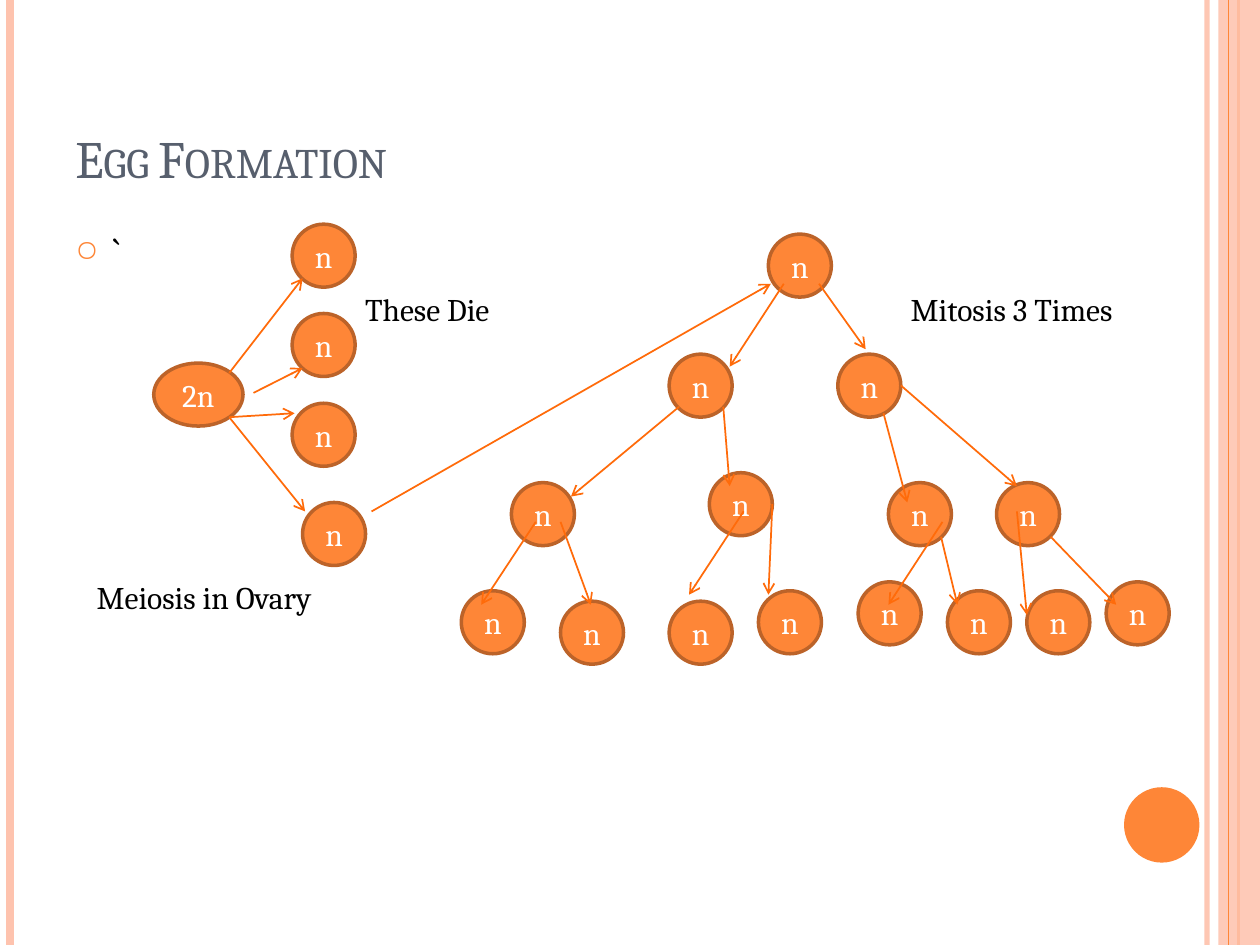
import lxml.etree
import pptx
import pptx.dml.color
import pptx.enum.shapes
import pptx.enum.text
import pptx.oxml.ns
import pptx.util
from pptx.util import Cm

FONT = "Cambria"
ORANGE, PEACH, ARROW, RIM = "FE8637", "FEC3AE", "FF6B0A", "BC6329"
SLIDE_WIDTH, SLIDE_HEIGHT = 25.4, 19.05
CELL = 1.27
SHAPES = pptx.enum.shapes.MSO_SHAPE
ANCHOR = pptx.enum.text.MSO_ANCHOR

# Cells are (left, top), arrows (from x, from y, to x, to y), in cm within their region.
MEIOSIS_CELLS = [(4.19, 0), (4.19, 1.8), (4.19, 3.61), (4.4, 5.61)]
MEIOSIS_ARROWS = [
    (2.92, 3, 4.4, 1.09), (3.41, 3.4, 4.4, 2.9),
    (2.92, 3.89, 4.24, 3.81), (2.92, 3.89, 4.45, 5.79),
]
MITOSIS_CELLS = [
    (6.19, 0),
    (4.19, 2.42), (7.59, 2.42),
    (1.01, 5.01), (5, 4.81), (8.61, 5.01), (10.79, 5.01),
    (0, 7.19), (2, 7.4), (4.19, 7.4), (5.99, 7.19),
    (8, 7.01), (9.8, 7.19), (11.4, 7.19), (13, 7.01),
]
MITOSIS_ARROWS = [
    (6.5, 1, 5.41, 2.67), (7.21, 1, 8.15, 2.32),
    (4.39, 3.48, 2.21, 5.29), (5.28, 3.48, 5.41, 5.08),
    (8.51, 3.61, 8.99, 5.41), (8.86, 3.05, 11.2, 5.08),
    (1.5, 5.8, 0.4, 7.47), (2, 5.8, 2.61, 7.47),
    (5.69, 5.59, 4.59, 7.27), (6.27, 5.44, 6.19, 7.27),
    (9.7, 5.8, 8.61, 7.47), (9.67, 6.1, 10, 7.47),
    (11.2, 5.59, 11.4, 7.68), (11.88, 6.1, 13.2, 7.47),
]


def color(value):
    return pptx.dml.color.RGBColor.from_string(value)


def add_element(parent, tag, **attributes):
    element = lxml.etree.SubElement(parent, pptx.oxml.ns.qn(tag))
    for name, value in attributes.items():
        element.set(name, str(value))
    return element


def set_opacity(fill_owner, percent):
    for solid in fill_owner.iter(pptx.oxml.ns.qn("a:srgbClr")):
        add_element(solid, "a:alpha", val=percent * 1000)


def style_paragraph(paragraph, size, font_color):
    paragraph.font.name = FONT
    paragraph.font.size = pptx.util.Pt(size)
    paragraph.font.color.rgb = color(font_color)


def add_text(slide, text, left, top, width, height, size=18, font_color="000000", wrap=True):
    box = slide.shapes.add_textbox(Cm(left), Cm(top), Cm(width), Cm(height))
    box.text_frame.word_wrap = wrap
    paragraph = box.text_frame.paragraphs[0]
    paragraph.text = text
    style_paragraph(paragraph, size, font_color)
    return box


def add_line(slide, x1, y1, x2, y2, line_color=ARROW, width=1, arrow=False):
    line = slide.shapes.add_connector(
        pptx.enum.shapes.MSO_CONNECTOR.STRAIGHT, Cm(x1), Cm(y1), Cm(x2), Cm(y2))
    line.line.color.rgb = color(line_color)
    line.line.width = pptx.util.Pt(width)
    if arrow:
        add_element(line.line._get_or_add_ln(), "a:tailEnd", type="arrow")
    add_element(line._element.spPr, "a:effectLst")
    return line


def add_plain_shape(slide, kind, left, top, width, height, fill):
    shape = slide.shapes.add_shape(kind, Cm(left), Cm(top), Cm(width), Cm(height))
    shape.shadow.inherit = False
    shape.fill.solid()
    shape.fill.fore_color.rgb = color(fill)
    shape.line.fill.background()
    return shape


def add_cell(slide, text, left, top, width=CELL):
    cell = add_plain_shape(
        slide, SHAPES.FLOWCHART_CONNECTOR, left, top, width, CELL, ORANGE)
    cell.line.color.rgb = color(RIM)
    cell.line.width = pptx.util.Pt(2)
    cell.text_frame.vertical_anchor = ANCHOR.MIDDLE
    paragraph = cell.text_frame.paragraphs[0]
    paragraph.text = text
    paragraph.alignment = pptx.enum.text.PP_ALIGN.CENTER
    style_paragraph(paragraph, 18, "FFFFFF")


def add_division(slide, left, top, cells, arrows):
    """Place the haploid cells and their arrows relative to the region's corner."""
    for x, y in cells:
        add_cell(slide, "n", left + x, top + y)
    for x1, y1, x2, y2 in arrows:
        add_line(slide, left + x1, top + y1, left + x2, top + y2, arrow=True)


def add_side_bands(slide, width, height):
    def add_stripe(x, stripe_color, points):
        return add_line(slide, x, 0, x, height, stripe_color, points)

    edge = add_stripe(width - 1.07, PEACH, 3)
    set_opacity(edge._element, 93)
    add_stripe(0.2, PEACH, 4.5)
    add_stripe(width - 0.43, ORANGE, 1.5)
    band = add_plain_shape(slide, SHAPES.RECTANGLE, width - 0.84, 0, 0.84, height, PEACH)
    set_opacity(band._element, 87)
    add_stripe(width - 0.64, ORANGE, 0.75)
    add_plain_shape(slide, SHAPES.OVAL, width - 2.74, height - 3.18, 1.52, 1.52, ORANGE)


def add_heading(slide, left, top, width):
    title = add_text(slide, "Egg Formation", left, top, width, 3.18, 30, "575F6D")
    title.text_frame.vertical_anchor = ANCHOR.BOTTOM
    properties = title.text_frame.paragraphs[0]._p.pPr
    properties.find(pptx.oxml.ns.qn("a:defRPr")).set("cap", "small")


def add_body(slide, left, top, width, height):
    body = add_text(slide, "`", left, top, width, height, 24)
    paragraph = body.text_frame.paragraphs[0]
    properties = paragraph._p.pPr
    indent = Cm(0.76)
    properties.set("marL", str(indent))
    properties.set("indent", str(-indent))
    defaults = properties.find(pptx.oxml.ns.qn("a:defRPr"))
    bullet_color = add_element(properties, "a:buClr")
    add_element(bullet_color, "a:srgbClr", val=ORANGE)
    add_element(properties, "a:buSzPct", val=70000)
    add_element(properties, "a:buChar", char="○")
    properties.append(defaults)
    paragraph.space_before = pptx.util.Pt(6)


def add_meiosis(slide, left, top):
    add_cell(slide, "2n", left + 1.4, top + 2.8, 1.8)
    add_division(slide, left, top, MEIOSIS_CELLS, MEIOSIS_ARROWS)
    add_text(slide, "These Die", left + 5.41, top + 1.2, 3.4, 1.8)
    add_text(slide, "Meiosis in Ovary", left, top + 7.01, 5.54, 1.02, wrap=False)


def add_mitosis(slide, left, top):
    add_division(slide, left, top, MITOSIS_CELLS, MITOSIS_ARROWS)
    add_text(slide, "Mitosis 3 Times", left + 8.81, top + 1, 5.21, 1.02, wrap=False)


def main():
    presentation = pptx.Presentation()
    presentation.slide_width = Cm(SLIDE_WIDTH)
    presentation.slide_height = Cm(SLIDE_HEIGHT)
    slide = presentation.slides.add_slide(presentation.slide_layouts[6])
    add_side_bands(slide, SLIDE_WIDTH, SLIDE_HEIGHT)
    add_heading(slide, 1.27, 0.76, 20.75)
    add_body(slide, 1.27, 4.45, 20.75, 13.54)
    add_meiosis(slide, 1.7, 4.52)
    add_mitosis(slide, 9.3, 4.72)
    add_line(slide, 7.49, 10.31, 15.54, 5.72, arrow=True)
    presentation.save("out.pptx")


if __name__ == "__main__":
    main()
